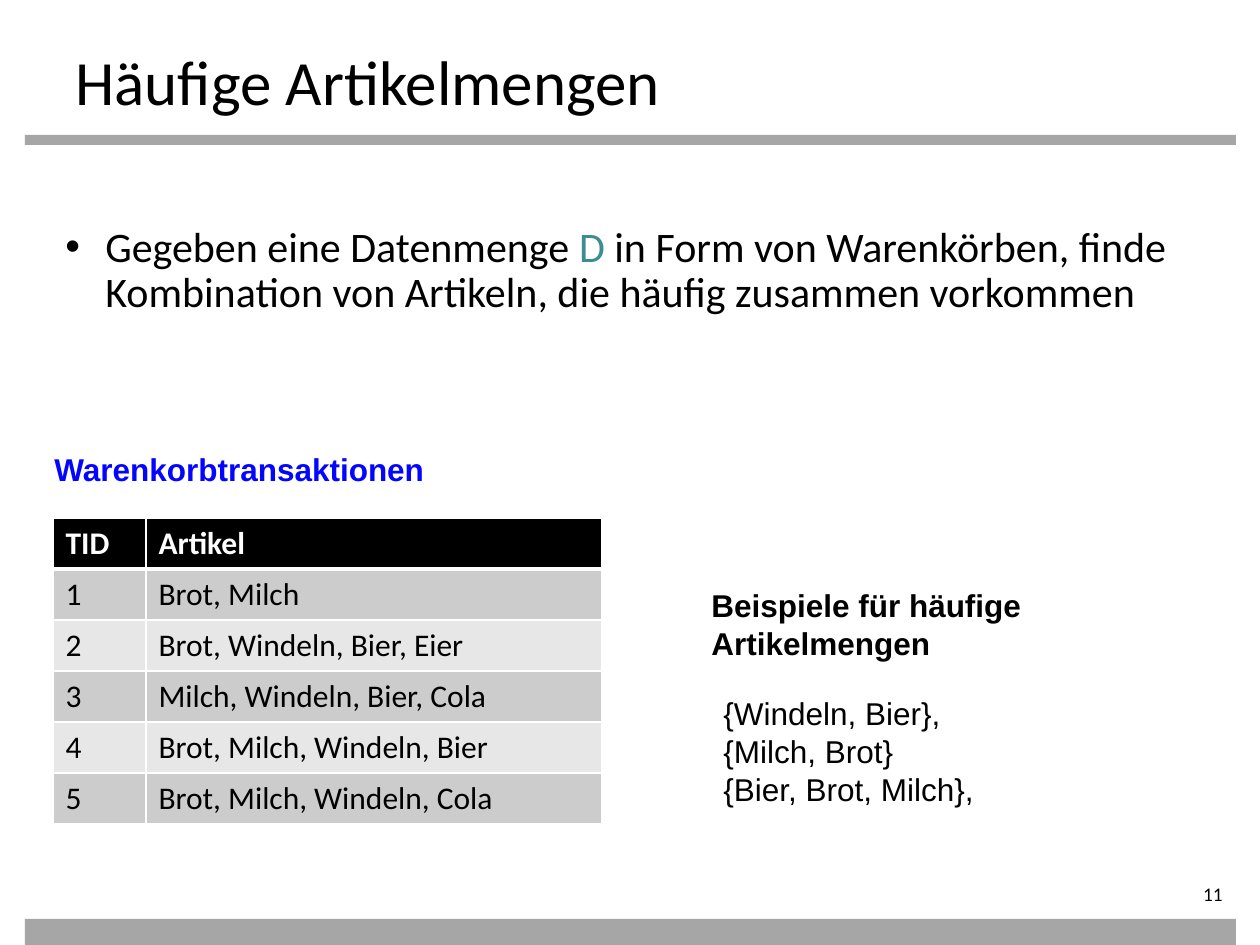
from lxml.etree import SubElement
from pptx import Presentation
from pptx.dml.color import RGBColor
from pptx.enum.shapes import MSO_SHAPE as Shape
from pptx.enum.text import MSO_ANCHOR as Anchor, PP_ALIGN as Align
from pptx.oxml import parse_xml
from pptx.oxml.ns import nsdecls, qn
from pptx.util import Emu, Pt

# Content: lengths in px, 126 to the inch
PAGE_WIDTH, PAGE_HEIGHT = 1260, 945
BLACK, WHITE, GREY, BLUE, TEAL = "000000", "FFFFFF", "A6A6A6", "0305FF", "3C8C93"
BARS = [(25, 135, 1211, 10), (25, 919, 1211, 26)]

TITLE = "Häufige Artikelmengen"
TASK = [
    ("Gegeben eine Datenmenge ", BLACK),
    ("D", TEAL),
    (" in Form von Warenkörben, finde Kombination von Artikeln, "
     "die häufig zusammen vorkommen", BLACK),
]
# Text, area, colour, bold
NOTES = [
    ("Warenkorbtransaktionen", (42, 444, 577, 50), BLUE, True),
    ("Beispiele für häufige Artikelmengen", (699, 580, 523, 89), BLACK, True),
    ("{Windeln, Bier},\v{Milch, Brot}\v{Bier, Brot, Milch},",
     (711, 688, 486, 127), BLACK, False),
]
PAGE_NUMBER = "11"

BASKETS = [
    ("TID", "Artikel"),
    ("1", "Brot, Milch"),
    ("2", "Brot, Windeln, Bier, Eier"),
    ("3", "Milch, Windeln, Bier, Cola"),
    ("4", "Brot, Milch, Windeln, Bier"),
    ("5", "Brot, Milch, Windeln, Cola"),
]
TABLE_LEFT, TABLE_TOP, ROW_HEIGHT = 53, 518, 51
COLUMN_WIDTHS = (93, 456)
ROW_FILLS = ("E7E7E7", "CCCCCC")


def px(length):
    return Emu(round(length * 914400 / 126))


def color(hex_text):
    return RGBColor.from_string(hex_text)


def style(span, size, hex_text, font="Calibri", bold=False):
    span.font.size, span.font.name, span.font.bold = Pt(size), font, bold
    span.font.color.rgb = color(hex_text)


def add_text(slide, area, parts, size, font="Calibri", bold=False):
    box = slide.shapes.add_textbox(*map(px, area))
    frame = box.text_frame
    frame.word_wrap = True
    para = frame.paragraphs[0]
    para.text = "".join(text for text, _ in parts)
    if len(parts) > 1:
        para.clear()
        for text, _ in parts:
            para.add_run().text = text
    hues = [hue for _, hue in parts]
    for index, span in enumerate(para.runs):
        style(span, size, hues[min(index, len(hues) - 1)], font, bold)
    return frame


def set_bullet(para, indent):
    props = para._p.get_or_add_pPr()
    props.set("marL", str(indent))
    props.set("indent", str(-indent))
    SubElement(props, qn("a:buFont")).set("typeface", "Arial")
    SubElement(props, qn("a:buChar")).set("char", "•")


def set_borders(cell, widths):
    props = cell._tc.get_or_add_tcPr()
    for index, (side, width) in enumerate(widths.items()):
        props.insert(index, parse_xml(
            f'<a:ln{side} {nsdecls("a")} w="{Pt(width)}"><a:solidFill>'
            f'<a:srgbClr val="{WHITE}"/></a:solidFill></a:ln{side}>'))


def add_baskets(slide):
    table = slide.shapes.add_table(
        len(BASKETS), len(COLUMN_WIDTHS), px(TABLE_LEFT), px(TABLE_TOP),
        px(sum(COLUMN_WIDTHS)), px(ROW_HEIGHT * len(BASKETS))).table
    for column, width in zip(table.columns, COLUMN_WIDTHS):
        column.width = px(width)
    for row, values in enumerate(BASKETS):
        table.rows[row].height = px(ROW_HEIGHT)
        header = row == 0
        for column, value in enumerate(values):
            cell = table.cell(row, column)
            cell.text_frame.text = value
            style(cell.text_frame.paragraphs[0].runs[0], 18,
                  WHITE if header else BLACK, bold=header)
            cell.fill.solid()
            cell.fill.fore_color.rgb = color(BLACK if header else ROW_FILLS[row % 2])
            set_borders(cell, {"L": 1, "R": 1, "T": 3 if row == 1 else 1,
                               "B": 3 if header else 1})


def main():
    deck = Presentation()
    deck.slide_width, deck.slide_height = px(PAGE_WIDTH), px(PAGE_HEIGHT)
    slide = deck.slides.add_slide(deck.slide_layouts[6])

    # Grey bars below the title and at the foot
    for area in BARS:
        bar = slide.shapes.add_shape(Shape.RECTANGLE, *map(px, area))
        bar.shadow.inherit = False
        bar.fill.solid()
        bar.fill.fore_color.rgb = color(GREY)
        bar.line.fill.background()

    # Title and task
    title = add_text(slide, (63, 35, 1134, 91), [(TITLE, BLACK)], 36)
    title.vertical_anchor = Anchor.MIDDLE
    task = add_text(slide, (53, 220, 1147, 158), TASK, 24).paragraphs[0]
    task.line_spacing, task.space_before = 0.9, Pt(6)
    set_bullet(task, px(40))

    # Heading, examples and table
    for text, area, hue, bold in NOTES:
        add_text(slide, area, [(text, hue)], 18, "Arial", bold)
    add_baskets(slide)

    # Page number
    number = add_text(slide, (1096, 882, 139, 28), [(PAGE_NUMBER, BLACK)], 11)
    number.margin_left = number.margin_top = number.margin_bottom = 0
    number.paragraphs[0].alignment = Align.RIGHT

    deck.save("out.pptx")


if __name__ == "__main__":
    main()
